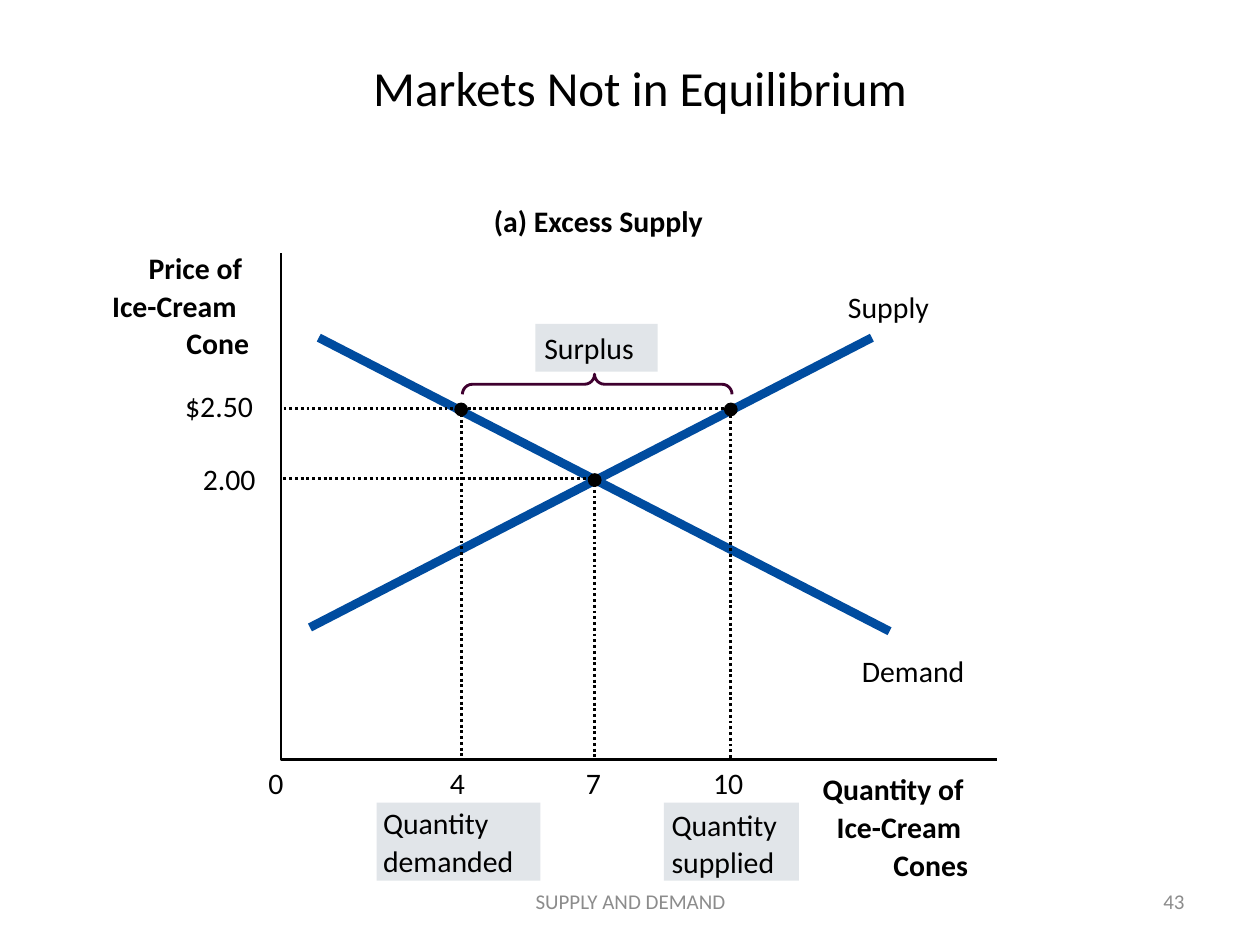
import collections

import lxml.etree
import pptx
import pptx.dml.color
import pptx.enum.dml
import pptx.enum.shapes
import pptx.enum.text
import pptx.oxml.ns
from pptx.util import Inches

BLACK = pptx.dml.color.RGBColor(0x00, 0x00, 0x00)
BLUE = pptx.dml.color.RGBColor(0x00, 0x4C, 0x9F)
PLUM = pptx.dml.color.RGBColor(0x3F, 0x00, 0x2F)
PALE = pptx.dml.color.RGBColor(0xE1, 0xE5, 0xE9)
GRAY = pptx.dml.color.RGBColor(0x8C, 0x8C, 0x8C)
ALIGN = pptx.enum.text.PP_ALIGN
ANCHOR = pptx.enum.text.MSO_ANCHOR
SHAPE = pptx.enum.shapes.MSO_SHAPE
DOTTED = pptx.enum.dml.MSO_LINE.ROUND_DOT

Box = collections.namedtuple("Box", "left top width height")


def place(box, x, y):
    """Return the slide position of a point given in inches within a box."""
    return box.left + Inches(x), box.top + Inches(y)


def add_text(slide, box, text, size=17, bold=False, color=BLACK, align=ALIGN.LEFT,
             anchor=ANCHOR.TOP, spacing=None, margin=0):
    """Write one paragraph of text in a box."""
    frame = slide.shapes.add_textbox(*box).text_frame
    frame.word_wrap = True
    frame.vertical_anchor = anchor
    frame.margin_left = frame.margin_right = Inches(margin)
    frame.margin_top = frame.margin_bottom = Inches(margin / 2)
    paragraph = frame.paragraphs[0]
    paragraph.alignment = align
    paragraph.line_spacing = spacing
    run = paragraph.add_run()
    run.text = text
    run.font.name = "Calibri"
    run.font.size = pptx.util.Pt(size)
    run.font.bold = bold
    run.font.color.rgb = color


def add_label(slide, box, text, x, y, width=1.4, **style):
    """Write a chart label at a point within a box."""
    add_text(slide, Box(*place(box, x, y), Inches(width), Inches(0.28)), text, **style)


def style_line(line, color=BLACK, width=1.63, dash=None):
    """Set the colour, width and dash of a line."""
    line.color.rgb = color
    line.width = pptx.util.Pt(width)
    if dash:
        line.dash_style = dash


def add_line(slide, box, start, end, **style):
    """Draw a straight line between two points within a box."""
    connector = slide.shapes.add_connector(
        pptx.enum.shapes.MSO_CONNECTOR.STRAIGHT, *place(box, *start), *place(box, *end))
    properties = connector._element.spPr
    style_line(connector.line, **style)
    lxml.etree.SubElement(properties, pptx.oxml.ns.qn("a:effectLst"))


def add_path(slide, box, points, **style):
    """Draw an open outline through points within a box."""
    start, *rest = [place(box, *point) for point in points]
    builder = slide.shapes.build_freeform(*start)
    builder.add_line_segments(rest, close=False)
    shape = builder.convert_to_shape()
    shape.shadow.inherit = False
    shape.fill.background()
    style_line(shape.line, **style)


def add_filled(slide, kind, box, color):
    """Draw a filled shape without an outline."""
    shape = slide.shapes.add_shape(kind, *box)
    shape.shadow.inherit = False
    shape.fill.solid()
    shape.fill.fore_color.rgb = color
    shape.line.fill.background()


def add_tag(slide, box, lines, indent, top):
    """Write lines on a pale panel that fills a box."""
    add_filled(slide, SHAPE.RECTANGLE, box, PALE)
    for index, text in enumerate(lines):
        add_label(slide, box, text, indent, top + 0.3 * index)


def add_axes(slide, box):
    """Draw both axes along a plot box, with their titles."""
    width, height = box.width.inches, box.height.inches
    add_path(slide, box, [(0, 0), (0, height), (width, height)])
    add_label(slide, box, "(a) Excess Supply", 1.69, -0.4, width=2.3, bold=True)
    add_label(slide, box, "0", -0.1, height + 0.04, width=0.13)
    titles = [
        (-0.03, [("Price of", -1.05), ("Ice-Cream", -1.34), ("Cone", -0.75)]),
        (height + 0.09, [("Quantity of", 4.3), ("Ice-Cream", 4.41), ("Cones", 4.86)]),
    ]
    for top, lines in titles:
        for index, (text, left) in enumerate(lines):
            add_label(slide, box, text, left, top + 0.3 * index, bold=True)


def add_curves(slide, box):
    """Draw the supply and demand lines with their names."""
    add_line(slide, box, (4.69, 0.67), (0.23, 2.97), color=BLUE, width=5)
    add_label(slide, box, "Supply", 4.5, 0.28)
    add_line(slide, box, (0.3, 0.67), (4.83, 3), color=BLUE, width=5)
    add_label(slide, box, "Demand", 4.61, 3.17)


def add_surplus(slide, box):
    """Draw the surplus brace with its tag."""
    depth, span = 0.16, 2.14
    left, top = place(box, 2.51 - depth / 2, 1.04 - span / 2)
    brace = slide.shapes.add_shape(SHAPE.LEFT_BRACE, left, top, Inches(depth), Inches(span))
    brace.rotation = 90
    brace.adjustments[0] = 0.5
    brace.adjustments[1] = 0.51
    brace.shadow.inherit = False
    brace.fill.background()
    style_line(brace.line, color=PLUM)
    tag = Box(*place(box, 2.02, 0.56), Inches(0.97), Inches(0.38))
    add_tag(slide, tag, ["Surplus"], 0.07, 0.05)


def add_guides(slide, box):
    """Draw dotted guides, points and values for each price and quantity."""
    floor = box.height.inches
    high, middle, edge = 1.23, 1.79, 0.02
    four, seven, ten = 1.43, 2.49, 3.57
    add_line(slide, box, (four, high), (four, floor), dash=DOTTED)
    add_path(slide, box, [(edge, high), (ten, high), (ten, floor)], dash=DOTTED)
    add_path(slide, box, [(edge, middle), (seven, middle), (seven, floor)], dash=DOTTED)
    add_line(slide, box, (edge, middle), (seven, middle), dash=DOTTED)
    size = 0.11
    for text, x, y, left in [("4", four, high, 1.34), ("7", seven, middle, 2.42),
                             ("10", ten, high, 3.43)]:
        dot = Box(*place(box, x - size / 2, y - size / 2 + 0.01), Inches(size), Inches(size))
        add_filled(slide, SHAPE.OVAL, dot, BLACK)
        add_label(slide, box, text, left, floor + 0.04, width=0.4)
    add_label(slide, box, "$2.50", -0.76, 1.07, width=0.7)
    add_label(slide, box, "2.00", -0.62, 1.65, width=0.6)


def add_quantity_tags(slide, box):
    """Name the two quantities below the horizontal axis."""
    for word, left, width, indent, top in [("demanded", 0.76, 1.3, 0.05, 0.02),
                                           ("supplied", 3.04, 1.07, 0.06, 0.03)]:
        tag = Box(*place(box, left, box.height.inches + 0.34), Inches(width), Inches(0.62))
        add_tag(slide, tag, ["Quantity", word], indent, top)


def add_footer(slide, box):
    """Write the footer text and the slide number in a strip."""
    style = dict(size=12, color=GRAY, anchor=ANCHOR.MIDDLE, margin=0.1)
    number_width = Inches(2.33)
    number = Box(box.left + box.width - number_width, box.top, number_width, box.height)
    add_text(slide, number, "43", align=ALIGN.RIGHT, **style)
    footer = Box(box.left, box.top, Inches(3.17), box.height)
    add_text(slide, footer, "SUPPLY AND DEMAND", align=ALIGN.CENTER, **style)


def main():
    """Build and save the slide."""
    presentation = pptx.Presentation()
    presentation.slide_width, presentation.slide_height = Inches(10), Inches(7.5)
    slide = presentation.slides.add_slide(presentation.slide_layouts[6])
    title = Box(Inches(0.66), Inches(0.38), Inches(8.84), Inches(0.7))
    add_text(slide, title, "Markets Not in Equilibrium", size=28, align=ALIGN.CENTER,
             anchor=ANCHOR.MIDDLE, spacing=0.8, margin=0.1)
    plot = Box(Inches(2.23), Inches(2.01), Inches(5.68), Inches(4.02))
    for add_part in (add_axes, add_curves, add_quantity_tags, add_surplus, add_guides):
        add_part(slide, plot)
    add_footer(slide, Box(Inches(3.42), Inches(6.95), Inches(6.08), Inches(0.4)))
    presentation.save("out.pptx")


if __name__ == "__main__":
    main()
